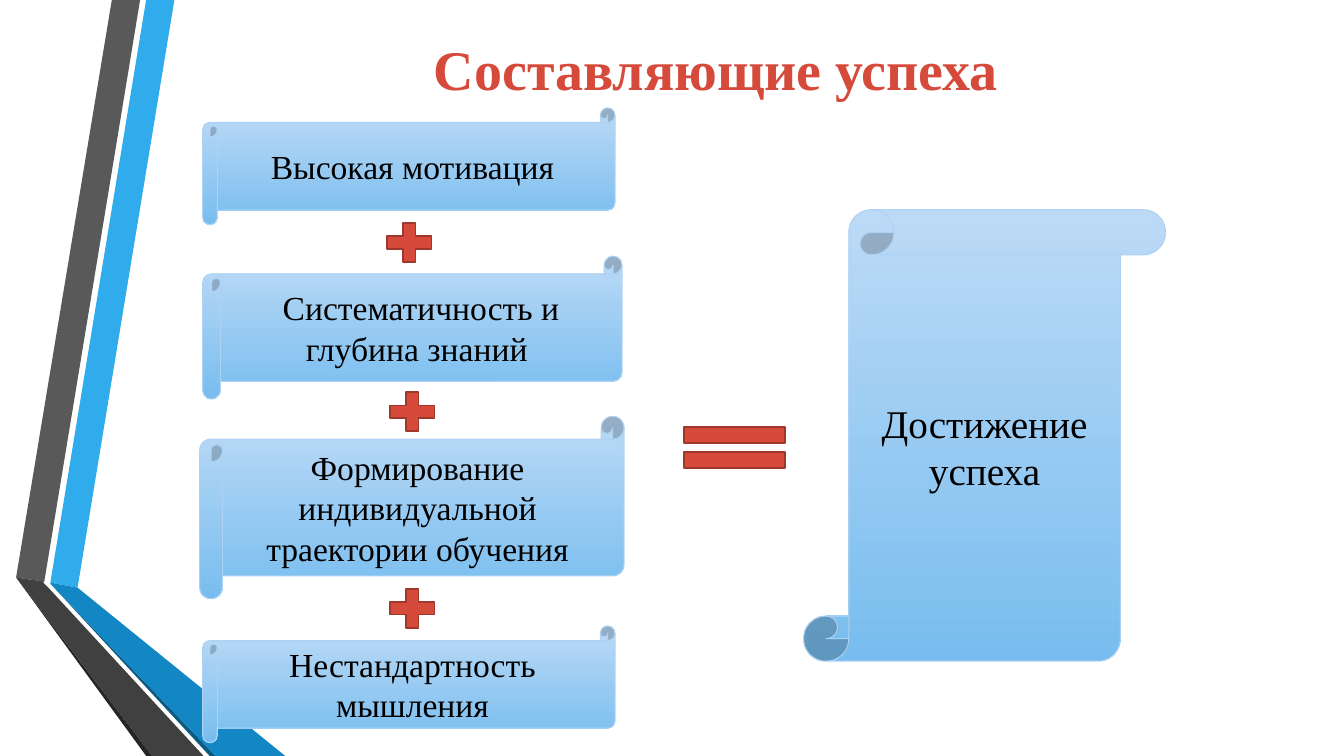
"""Build the slide on the components of success."""
from pptx import Presentation
from pptx import util as u
from pptx.dml.color import RGBColor
from pptx.enum import shapes, text

RED = RGBColor(0xD6, 0x4A, 0x3B)
DARK_RED = RGBColor(0x9E, 0x37, 0x2C)
BLACK = RGBColor(0, 0, 0)
SCROLL_TOP = RGBColor(0xBC, 0xDA, 0xF6)
SCROLL_BOTTOM = RGBColor(0x78, 0xBD, 0xEF)
SCROLL_LINE = RGBColor(0xAE, 0xD2, 0xF4)
BLUE = RGBColor(0x30, 0xAC, 0xEC)
MID_BLUE = RGBColor(0x12, 0x87, 0xC3)
DEEP_BLUE = RGBColor(0x0C, 0x5A, 0x82)
GREY = RGBColor(0x59, 0x59, 0x59)
DARK_GREY = RGBColor(0x40, 0x40, 0x40)
NEAR_BLACK = RGBColor(0x26, 0x26, 0x26)
FONT = "Times New Roman"
SHAPE = shapes.MSO_SHAPE

RIBBONS = [
    (BLUE, [(34, 578), (61, 583), (157, 0), (129, 0)]),
    (GREY, [(123, 0), (95, 0), (0, 573), (28, 577)]),
    (NEAR_BLACK, [(0, 573), (129, 750), (135, 750)]),
    (DEEP_BLUE, [(34, 579), (192, 750), (198, 750)]),
    (MID_BLUE, [(34, 579), (198, 750), (267, 750), (61, 583), (34, 578)]),
    (DARK_GREY, [(186, 750), (32, 583), (27, 578), (28, 577), (0, 573), (135, 750)]),
]

STEPS = [
    ("Высокая мотивация", (0.03, 0, 4.09, 1.16)),
    (" Систематичность и глубина знаний", (0.03, 1.47, 4.16, 1.42)),
    ("Формирование индивидуальной траектории обучения", (0, 3.06, 4.21, 1.81)),
    ("Нестандартность мышления", (0.03, 5.14, 4.09, 1.16)),
]
PLUSES = [(1.78, 1.07), (1.81, 2.75), (1.81, 4.7)]


def write(sp, words, size, color, bold=False):
    """Put centred words in a shape."""
    tf = sp.text_frame
    tf.word_wrap = True
    tf.vertical_anchor = text.MSO_ANCHOR.MIDDLE
    p = tf.paragraphs[0]
    p.text = words
    p.alignment = text.PP_ALIGN.CENTER
    font = p.runs[0].font
    font.name, font.size, font.bold = FONT, u.Pt(size), bold
    font.color.rgb = color


def add_preset(s, kind, x, y, w, h, line, width):
    """Add an outlined preset shape without a shadow."""
    sp = s.shapes.add_shape(kind, *map(u.Inches, (x, y, w, h)))
    sp.shadow.inherit = False
    sp.line.color.rgb = line
    sp.line.width = u.Pt(width)
    return sp


def add_scroll(s, kind, x, y, w, h, words, size):
    """Add a gradient scroll with its words."""
    sp = add_preset(s, kind, x, y, w, h, SCROLL_LINE, 0.75)
    sp.fill.gradient()
    sp.fill.gradient_angle = 270
    for stop, color in zip(sp.fill.gradient_stops, (SCROLL_TOP, SCROLL_BOTTOM)):
        stop.color.rgb = color
    write(sp, words, size, BLACK)


def add_sign(s, kind, x, y, w, h):
    """Add a red mathematical sign."""
    sp = add_preset(s, kind, x, y, w, h, DARK_RED, 1.25)
    sp.fill.solid()
    sp.fill.fore_color.rgb = RED


def add_ribbons(s, x, y):
    """Draw the folded ribbons, given in hundredths of an inch."""
    for color, points in RIBBONS:
        builder = s.shapes.build_freeform(*points[0], scale=u.Inches(0.01))
        builder.add_line_segments(points[1:], close=True)
        sp = builder.convert_to_shape(u.Inches(x), u.Inches(y))
        sp.shadow.inherit = False
        sp.fill.solid()
        sp.fill.fore_color.rgb = color
        sp.line.fill.background()


def add_title(s, x, y, w, h):
    """Add the slide title."""
    sp = s.shapes.add_textbox(*map(u.Inches, (x, y, w, h)))
    write(sp, "Составляющие успеха", 40, RED, bold=True)


def add_steps(s, x, y):
    """Stack the component scrolls with plus signs between them."""
    for words, (dx, dy, w, h) in STEPS:
        add_scroll(s, SHAPE.HORIZONTAL_SCROLL, x + dx, y + dy, w, h, words, 24)
    for dx, dy in PLUSES:
        add_sign(s, SHAPE.MATH_PLUS, x + dx, y + dy, 0.6, 0.53)


def add_result(s, x, y):
    """Add the equals sign and the resulting scroll."""
    add_scroll(s, SHAPE.VERTICAL_SCROLL, x + 1.37, y, 3.59, 4.48, "Достижение успеха", 28)
    add_sign(s, SHAPE.MATH_EQUAL, x, y + 2.01, 1.37, 0.7)


def main():
    """Build and save the presentation."""
    prs = Presentation()
    prs.slide_width, prs.slide_height = u.Inches(13.33), u.Inches(7.5)
    s = prs.slides.add_slide(prs.slide_layouts[6])
    add_ribbons(s, 0.16, 0)
    add_title(s, 1.62, 0.16, 10.96, 1.04)
    add_steps(s, 1.98, 1.07)
    add_result(s, 6.6, 2.08)
    prs.save("out.pptx")


if __name__ == "__main__":
    main()
